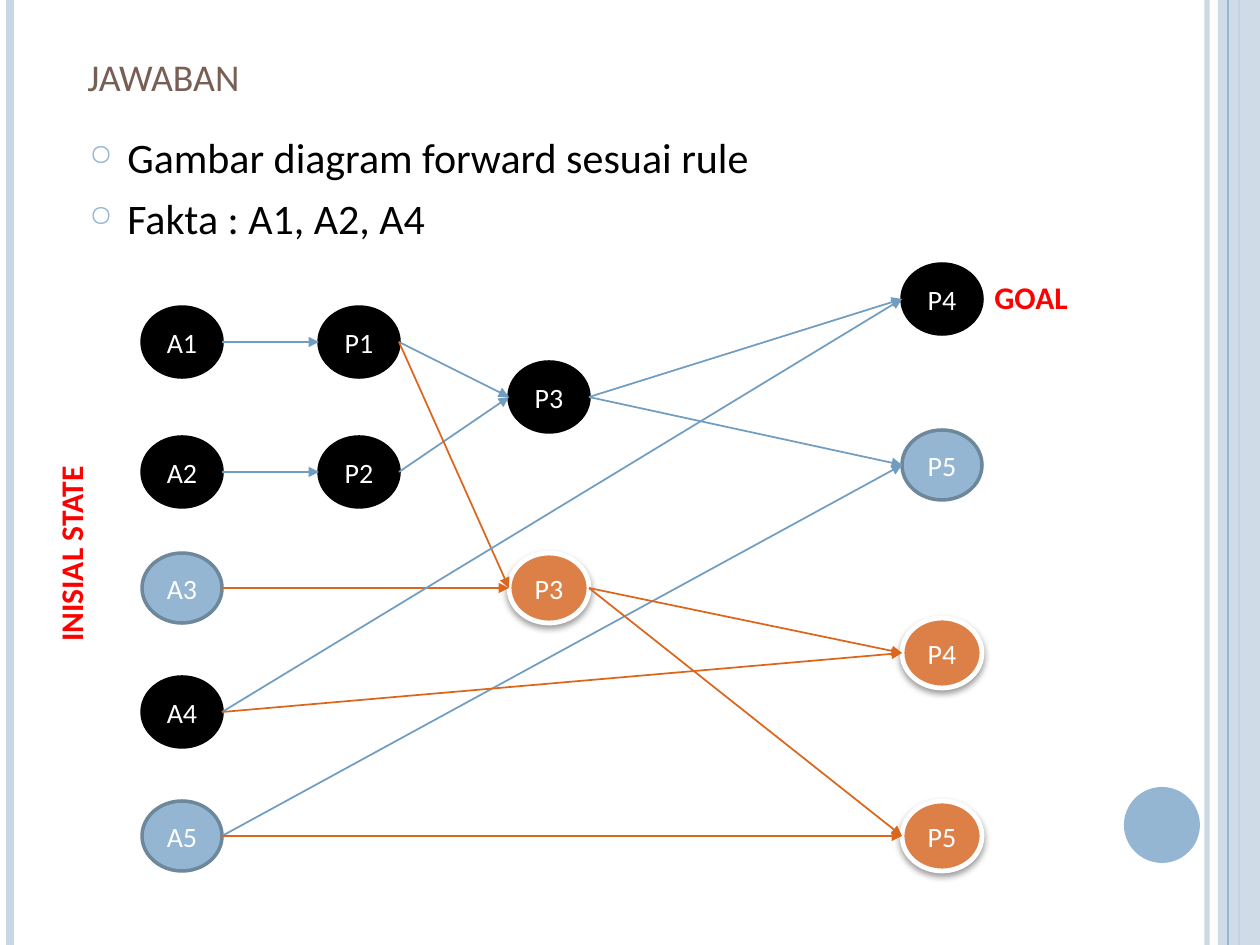
from dataclasses import dataclass

from lxml.etree import SubElement
from pptx import Presentation
from pptx.dml.color import RGBColor
from pptx.enum.shapes import MSO_CONNECTOR, MSO_SHAPE
from pptx.enum.text import MSO_ANCHOR, PP_ALIGN
from pptx.oxml.ns import qn
from pptx.util import Emu, Pt

PX_PER_INCH = 126
WIDTH, HEIGHT = 1260, 945
NODE_WIDTH, NODE_HEIGHT = 80, 70
FONT = "Calibri"
BLUE, PALE_BLUE, RED, WHITE = "94B6D2", "C8D7E5", "FF0000", "FFFFFF"


@dataclass(frozen=True)
class NodeStyle:
    fill: str
    line: str
    line_width: float
    shadow: bool = False


@dataclass(frozen=True)
class Node:
    label: str
    left: int
    top: int
    style: NodeStyle

    @property
    def middle(self) -> int:
        return self.top + NODE_HEIGHT // 2


KNOWN = NodeStyle("000000", "000000", 2)
UNKNOWN = NodeStyle(BLUE, "6D879B", 2)
FAILED = NodeStyle("DD8047", WHITE, 2.75, shadow=True)
FORWARD, BLOCKED = "719DC1", "DD661D"

# Columns of the diagram
FACTS, FIRST, SECOND, RESULTS = 142, 319, 509, 902

NODES = {
    "A1": Node("A1", FACTS, 307, KNOWN),
    "A2": Node("A2", FACTS, 437, KNOWN),
    "A3": Node("A3", FACTS, 553, UNKNOWN),
    "A4": Node("A4", FACTS, 677, KNOWN),
    "A5": Node("A5", FACTS, 801, UNKNOWN),
    "P1": Node("P1", FIRST, 307, KNOWN),
    "P2": Node("P2", FIRST, 437, KNOWN),
    "P3": Node("P3", SECOND, 362, KNOWN),
    "P3 failed": Node("P3", SECOND, 553, FAILED),
    "P4": Node("P4", RESULTS, 264, KNOWN),
    "P5": Node("P5", RESULTS, 430, UNKNOWN),
    "P4 failed": Node("P4", RESULTS, 618, FAILED),
    "P5 failed": Node("P5", RESULTS, 801, FAILED),
}

ARROWS = [
    ("A1", "P1", FORWARD), ("A2", "P2", FORWARD),
    ("P1", "P3", FORWARD), ("P2", "P3", FORWARD),
    ("P1", "P3 failed", BLOCKED), ("A3", "P3 failed", BLOCKED),
    ("P3", "P4", FORWARD), ("A4", "P4", FORWARD),
    ("P3", "P5", FORWARD), ("A5", "P5", FORWARD),
    ("A5", "P5 failed", BLOCKED), ("A4", "P4 failed", BLOCKED),
    ("P3 failed", "P5 failed", BLOCKED), ("P3 failed", "P4 failed", BLOCKED),
]


def px(length: int) -> Emu:
    return Emu(round(length * 914400 / PX_PER_INCH))


def color(value: str) -> RGBColor:
    return RGBColor.from_string(value)


def set_opacity(properties, percent: int) -> None:
    for element in properties.iter(qn("a:srgbClr")):
        SubElement(element, qn("a:alpha"), val=str(percent * 1000))


def add_run(paragraph, text: str, size: int, value: str, bold: bool = False):
    run = paragraph.add_run()
    run.text = text
    run.font.name = FONT
    run.font.size = Pt(size)
    run.font.bold = bold
    run.font.color.rgb = color(value)
    return run


def add_text_box(slide, left: int, top: int, width: int, height: int):
    box = slide.shapes.add_textbox(px(left), px(top), px(width), px(height))
    box.text_frame.word_wrap = True
    return box


def add_line(slide, start: tuple[int, int], end: tuple[int, int], value: str, width: float):
    line = slide.shapes.add_connector(
        MSO_CONNECTOR.STRAIGHT, px(start[0]), px(start[1]), px(end[0]), px(end[1]))
    line.line.color.rgb = color(value)
    line.line.width = Pt(width)
    SubElement(line._element.spPr, qn("a:effectLst"))
    return line


def add_plain_shape(slide, kind, left: int, top: int, width: int, height: int, fill: str):
    shape = slide.shapes.add_shape(kind, px(left), px(top), px(width), px(height))
    shape.shadow.inherit = False
    shape.fill.solid()
    shape.fill.fore_color.rgb = color(fill)
    shape.line.fill.background()
    return shape


def add_node(slide, node: Node) -> None:
    style = node.style
    shape = add_plain_shape(slide, MSO_SHAPE.OVAL, node.left, node.top,
                            NODE_WIDTH, NODE_HEIGHT, style.fill)
    shape.line.color.rgb = color(style.line)
    shape.line.width = Pt(style.line_width)
    if style.shadow:
        effects = shape._element.spPr.find(qn("a:effectLst"))
        shadow = SubElement(effects, qn("a:outerShdw"), blurRad=str(Pt(4)),
                            dist=str(Pt(2)), dir="5400000", rotWithShape="0")
        SubElement(shadow, qn("a:srgbClr"), val="000000")
        set_opacity(shadow, 40)
    shape.text_frame.vertical_anchor = MSO_ANCHOR.MIDDLE
    paragraph = shape.text_frame.paragraphs[0]
    paragraph.alignment = PP_ALIGN.CENTER
    add_run(paragraph, node.label, 16, WHITE)


def add_arrow(slide, source: Node, target: Node, value: str) -> None:
    arrow = add_line(slide, (source.left + NODE_WIDTH, source.middle),
                     (target.left, target.middle), value, 1)
    SubElement(arrow.line._get_or_add_ln(), qn("a:tailEnd"), type="triangle")


def add_bullet(paragraph, text: str) -> None:
    paragraph.space_before = Pt(6)
    properties = paragraph._p.get_or_add_pPr()
    properties.set("marL", str(px(38)))
    properties.set("indent", str(-px(38)))
    bullet_color = SubElement(properties, qn("a:buClr"))
    SubElement(bullet_color, qn("a:srgbClr"), val=BLUE)
    SubElement(properties, qn("a:buSzPct"), val="70000")
    SubElement(properties, qn("a:buChar"), char="○")
    add_run(paragraph, text, 24, "000000")


def add_decoration(slide) -> None:
    def add_stripe(x: int, value: str, width: float):
        return add_line(slide, (x, 0), (x, HEIGHT), value, width)

    inner = add_stripe(1207, PALE_BLUE, 3)
    set_opacity(inner._element.spPr, 93)
    add_stripe(10, PALE_BLUE, 4.5)
    add_stripe(1239, BLUE, 1.5)
    band = add_plain_shape(slide, MSO_SHAPE.RECTANGLE, 1218, 0, 42, HEIGHT, PALE_BLUE)
    set_opacity(band._element.spPr, 87)
    add_stripe(1228, BLUE, 0.75)
    add_plain_shape(slide, MSO_SHAPE.OVAL, 1124, 787, 76, 76, BLUE)


def main() -> None:
    presentation = Presentation()
    presentation.slide_width, presentation.slide_height = px(WIDTH), px(HEIGHT)
    slide = presentation.slides.add_slide(presentation.slide_layouts[6])
    add_decoration(slide)

    # Title in small capitals
    title = add_text_box(slide, 75, 44, 1029, 63).text_frame
    title.vertical_anchor = MSO_ANCHOR.BOTTOM
    run = add_run(title.paragraphs[0], "jawaban", 27, "775F55")
    run.font._element.set("cap", "small")

    # Bullets
    body = add_text_box(slide, 77, 125, 893, 160).text_frame
    add_bullet(body.paragraphs[0], "Gambar diagram forward sesuai rule")
    add_bullet(body.add_paragraph(), "Fakta : A1, A2, A4")

    # Diagram
    for node in NODES.values():
        add_node(slide, node)
    for source, target, value in ARROWS:
        add_arrow(slide, NODES[source], NODES[target], value)

    # Labels
    goal = add_text_box(slide, 982, 272, 106, 50)
    add_run(goal.text_frame.paragraphs[0], "GOAL", 18, RED, bold=True)
    initial = add_text_box(slide, -107, 529, 355, 50)
    initial.rotation = 270
    paragraph = initial.text_frame.paragraphs[0]
    paragraph.alignment = PP_ALIGN.CENTER
    add_run(paragraph, "INISIAL STATE", 18, RED, bold=True)

    presentation.save("out.pptx")


if __name__ == "__main__":
    main()
